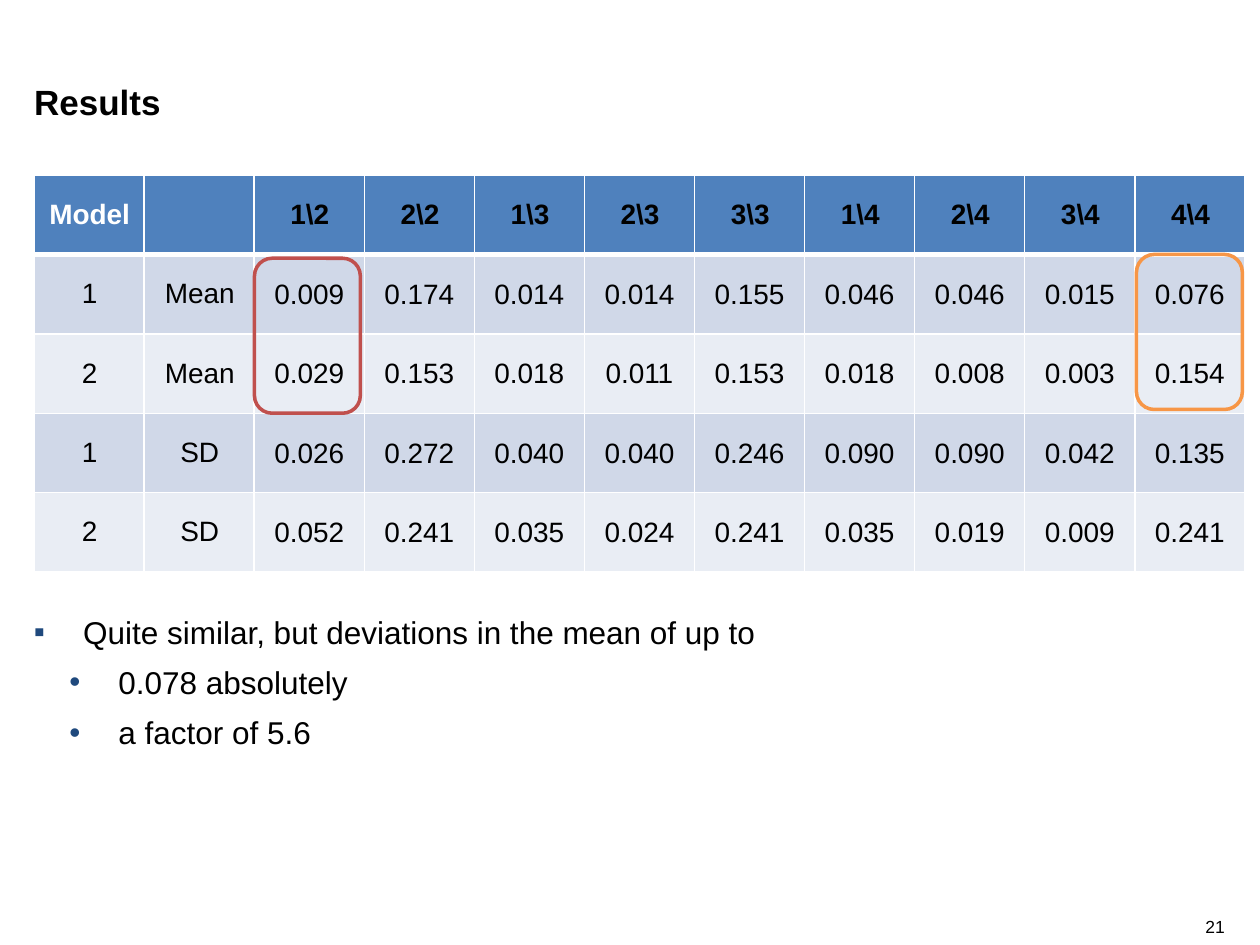
import pptx
import pptx.dml.color
import pptx.enum.shapes
import pptx.enum.text
import pptx.oxml
import pptx.oxml.ns
import pptx.util
from pptx.util import Inches

ALIGN = pptx.enum.text.PP_ALIGN
BLACK, WHITE = "000000", "FFFFFF"
HEADER_FILL, BAND_FILLS = "4F81BD", ("D0D8E8", "E9EDF4")
BULLET_COLOR, RED, ORANGE = "1F497D", "C0504D", "F79646"
LABEL_COLUMNS = 2

HEADER = ["Model", "", "1\\2", "2\\2", "1\\3", "2\\3", "3\\3", "1\\4", "2\\4", "3\\4", "4\\4"]
RESULTS = [
    "1 Mean 0.009 0.174 0.014 0.014 0.155 0.046 0.046 0.015 0.076",
    "2 Mean 0.029 0.153 0.018 0.011 0.153 0.018 0.008 0.003 0.154",
    "1 SD 0.026 0.272 0.040 0.040 0.246 0.090 0.090 0.042 0.135",
    "2 SD 0.052 0.241 0.035 0.024 0.241 0.035 0.019 0.009 0.241",
]
# Text, bullet character and left indent in inches
FINDINGS = [
    ("Quite similar, but deviations in the mean of up to", "▪", 0.39),
    ("0.078 absolutely", "•", 0.67),
    ("a factor of 5.6", "•", 0.67),
]


def rgb(color):
    return pptx.dml.color.RGBColor.from_string(color)


def add_xml(parent, markup):
    """Append a DrawingML element written with the a: prefix."""
    name, rest = markup[1:].split(" ", 1)
    namespace = pptx.oxml.ns.nsdecls("a")
    parent.append(pptx.oxml.parse_xml(f"<{name} {namespace} {rest}"))


class ResultsSlide:
    """Holds the text style and the current slide."""

    def __init__(self, slide, font_name="Arial"):
        self.slide = slide
        self.font_name = font_name

    def style(self, paragraph, size, color=BLACK, bold=False, align=ALIGN.LEFT):
        paragraph.alignment = align
        for run in paragraph.runs:
            run.font.name = self.font_name
            run.font.size = pptx.util.Pt(size)
            run.font.bold = bold
            run.font.color.rgb = rgb(color)

    def frame(self, left, top, width, height):
        """Add a wrapping text box without insets and return its text frame."""
        box = self.slide.shapes.add_textbox(
            Inches(left), Inches(top), Inches(width), Inches(height))
        frame = box.text_frame
        frame.word_wrap = True
        frame.margin_left = frame.margin_right = 0
        frame.margin_top = frame.margin_bottom = 0
        return frame

    def text(self, position, words, size, **look):
        frame = self.frame(*position)
        frame.text = words
        self.style(frame.paragraphs[0], size, **look)

    def bullets(self, position, items, size, hanging=0.39):
        frame = self.frame(*position)
        frame.text = "\n".join(words for words, _, _ in items)
        for paragraph, (_, bullet, indent) in zip(frame.paragraphs, items):
            paragraph.line_spacing = 1.05
            paragraph.space_after = pptx.util.Pt(6)
            properties = paragraph._p.get_or_add_pPr()
            properties.set("marL", str(Inches(indent)))
            properties.set("indent", str(-Inches(hanging)))
            add_xml(properties, f'<a:buClr ><a:srgbClr val="{BULLET_COLOR}"/></a:buClr>')
            add_xml(properties, f'<a:buFont typeface="{self.font_name}"/>')
            add_xml(properties, f'<a:buChar char="{bullet}"/>')
            self.style(paragraph, size)

    def borders(self, cell, top, bottom):
        properties = cell._tc.get_or_add_tcPr()
        for side, width in (("L", 1), ("R", 1), ("T", top), ("B", bottom)):
            add_xml(properties, f'<a:ln{side} w="{pptx.util.Pt(width)}"><a:solidFill>'
                                f'<a:srgbClr val="{WHITE}"/></a:solidFill></a:ln{side}>')

    def table(self, left, top, width, height, rows):
        row_count, column_count = len(rows), len(rows[0])
        table = self.slide.shapes.add_table(
            row_count, column_count, Inches(left), Inches(top),
            Inches(width), Inches(height)).table
        for column in table.columns:
            column.width = Inches(width / column_count)
        for row_index, row in enumerate(rows):
            table.rows[row_index].height = Inches(height / row_count)
            for column_index, words in enumerate(row):
                self.cell(table.cell(row_index, column_index),
                          row_index, column_index, words)

    def cell(self, cell, row_index, column_index, words):
        is_header = row_index == 0
        is_value = not is_header and column_index >= LABEL_COLUMNS
        self.borders(cell, top=3 if row_index == 1 else 1, bottom=3 if is_header else 1)
        cell.fill.solid()
        cell.fill.fore_color.rgb = rgb(
            HEADER_FILL if is_header else BAND_FILLS[(row_index - 1) % 2])
        cell.vertical_anchor = pptx.enum.text.MSO_ANCHOR.MIDDLE
        cell.margin_left = Inches(0.01 if is_value else 0.05)
        cell.margin_right = Inches(0.01 if is_value else 0.04)
        cell.margin_top = Inches(0.01 if is_value else 0)
        cell.margin_bottom = 0
        cell.text_frame.text = words
        color = WHITE if is_header and column_index < LABEL_COLUMNS else BLACK
        self.style(cell.text_frame.paragraphs[0], 16, color, is_header, ALIGN.CENTER)

    def highlight(self, left, top, color, width=0.84, height=1.23):
        shape = self.slide.shapes.add_shape(
            pptx.enum.shapes.MSO_SHAPE.ROUNDED_RECTANGLE,
            Inches(left), Inches(top), Inches(width), Inches(height))
        shape.shadow.inherit = False
        shape.fill.background()
        shape.line.color.rgb = rgb(color)
        shape.line.width = pptx.util.Pt(2)


def main():
    presentation = pptx.Presentation()
    presentation.slide_width = Inches(10)
    presentation.slide_height = Inches(7.5)
    results = ResultsSlide(presentation.slides.add_slide(presentation.slide_layouts[6]))

    results.text((0.27, 0.64, 8.38, 0.66), "Results", 20, bold=True)
    results.bullets((0.27, 4.85, 9.46, 2.36), FINDINGS, 18)
    results.text((9.03, 7.27, 0.69, 0.2), "21", 10, align=ALIGN.RIGHT)
    results.table(0.27, 1.39, 9.61, 3.15, [HEADER] + [row.split() for row in RESULTS])
    results.highlight(9.02, 2.02, ORANGE)
    results.highlight(2.02, 2.05, RED)

    presentation.save("out.pptx")


if __name__ == "__main__":
    main()
